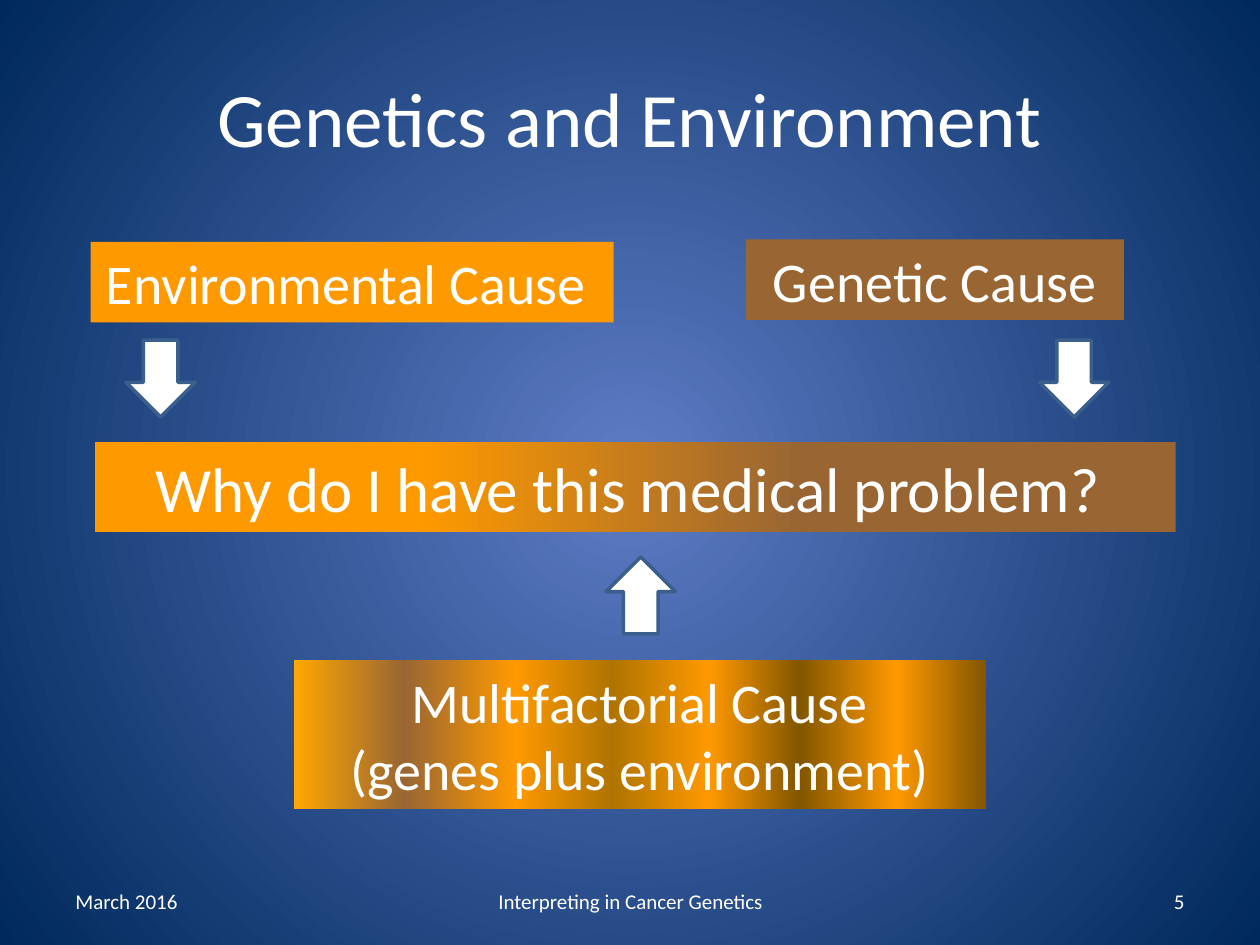
from lxml import etree
from pptx import Presentation
from pptx.dml.color import RGBColor
from pptx.enum import shapes, text
from pptx.oxml import ns
from pptx.util import Inches, Pt

WHITE = RGBColor(0xFF, 0xFF, 0xFF)
ORANGE = RGBColor(0xFF, 0x99, 0x00)
AMBER = RGBColor(0xFF, 0xA8, 0x00)
BROWN = RGBColor(0x99, 0x66, 0x33)
OLIVE = RGBColor(0xAF, 0x74, 0x00)
DARK_OLIVE = RGBColor(0x82, 0x56, 0x00)
SKY = RGBColor(0x5E, 0x7C, 0xC5)
NAVY = RGBColor(0x00, 0x29, 0x5C)
ARROW_EDGE = RGBColor(0x3A, 0x5F, 0x8C)
FONT = "Calibri"

TITLE = "Genetics and Environment"
BACKDROP = [(0, SKY), (100, NAVY)]
QUESTION_BLEND = [(0, BROWN), (35, BROWN), (70, ORANGE), (100, ORANGE)]
MIXED_BLEND = [(0, DARK_OLIVE), (13, ORANGE), (27, DARK_OLIVE), (40, ORANGE),
               (54, OLIVE), (68, ORANGE), (84, BROWN), (100, AMBER)]
CAUSES = [
    ("Environmental Cause ", (0.72, 1.92, 4.15, 0.64), ORANGE, 32, False),
    ("Genetic Cause", (5.92, 1.9, 3, 0.64), BROWN, 32, True),
    ("Why do I have this medical problem? ", (0.75, 3.51, 8.58, 0.71), QUESTION_BLEND, 36, True),
    ("Multifactorial Cause\n(genes plus environment)", (2.33, 5.24, 5.5, 1.18), MIXED_BLEND, 32, True),
]
ARROW_SIZE = (0.55, 0.61)
ARROWS = [(1, 2.7, 0), (8.25, 2.7, 0), (4.81, 4.42, 180)]
FOOTER_TOP, FOOTER_HEIGHT = 6.95, 0.4
FOOTERS = [
    ("March 2016", 0.5, 2.33, text.PP_ALIGN.LEFT),
    ("Interpreting in Cancer Genetics", 3.42, 3.17, text.PP_ALIGN.CENTER),
    ("5", 7.17, 2.33, text.PP_ALIGN.RIGHT),
]


def inches(*lengths):
    return [Inches(length) for length in lengths]


def write(box, content, size, align=text.PP_ALIGN.CENTER, wrap=True):
    frame = box.text_frame
    frame.text = content
    frame.word_wrap = wrap
    frame.auto_size = text.MSO_AUTO_SIZE.NONE
    frame.vertical_anchor = text.MSO_ANCHOR.MIDDLE
    for para in frame.paragraphs:
        para.alignment = align
        para.font.size = Pt(size)
        para.font.name = FONT
        para.font.color.rgb = WHITE


def blend(fill, element, stops, radial=False):
    fill.solid()
    fill.fore_color.rgb = stops[0][1]
    solid = next(element.iter(ns.qn("a:solidFill")))
    gradient = etree.Element(ns.qn("a:gradFill"), rotWithShape="1")
    stop_list = etree.SubElement(gradient, ns.qn("a:gsLst"))
    for share, color in stops:
        stop = etree.SubElement(stop_list, ns.qn("a:gs"), pos=str(share * 1000))
        etree.SubElement(stop, ns.qn("a:srgbClr"), val=str(color))
    if radial:
        shade = etree.SubElement(gradient, ns.qn("a:path"), attrib={"path": "circle"})
        center = dict.fromkeys("ltrb", "50000")
        etree.SubElement(shade, ns.qn("a:fillToRect"), attrib=center)
    else:
        etree.SubElement(gradient, ns.qn("a:lin"), ang=str(180 * 60000), scaled="0")
    solid.getparent().replace(solid, gradient)


def add_shape(page, kind, place, fill):
    box = page.shapes.add_shape(kind, *inches(*place))
    box.shadow.inherit = False
    box.line.fill.background()
    if isinstance(fill, list):
        blend(box.fill, box.element.spPr, fill)
    else:
        box.fill.solid()
        box.fill.fore_color.rgb = fill
    return box


def main():
    deck = Presentation()
    deck.slide_width, deck.slide_height = inches(10, 7.5)
    page = deck.slides.add_slide(deck.slide_layouts[5])
    blend(page.background.fill, page.element, BACKDROP, radial=True)

    title = page.shapes.title
    title.left, title.top, title.width, title.height = inches(0.5, 0.3, 9, 1.25)
    write(title, TITLE, 44)

    for content, left, width, align in FOOTERS:
        box = page.shapes.add_textbox(*inches(left, FOOTER_TOP, width, FOOTER_HEIGHT))
        write(box, content, 12, align)

    for content, place, fill, size, wrap in CAUSES:
        box = add_shape(page, shapes.MSO_SHAPE.RECTANGLE, place, fill)
        write(box, content, size, wrap=wrap)

    for left, top, turn in ARROWS:
        arrow = add_shape(page, shapes.MSO_SHAPE.DOWN_ARROW, (left, top, *ARROW_SIZE), WHITE)
        arrow.line.color.rgb = ARROW_EDGE
        arrow.line.width = Pt(2)
        arrow.rotation = turn

    deck.save("out.pptx")


if __name__ == "__main__":
    main()
